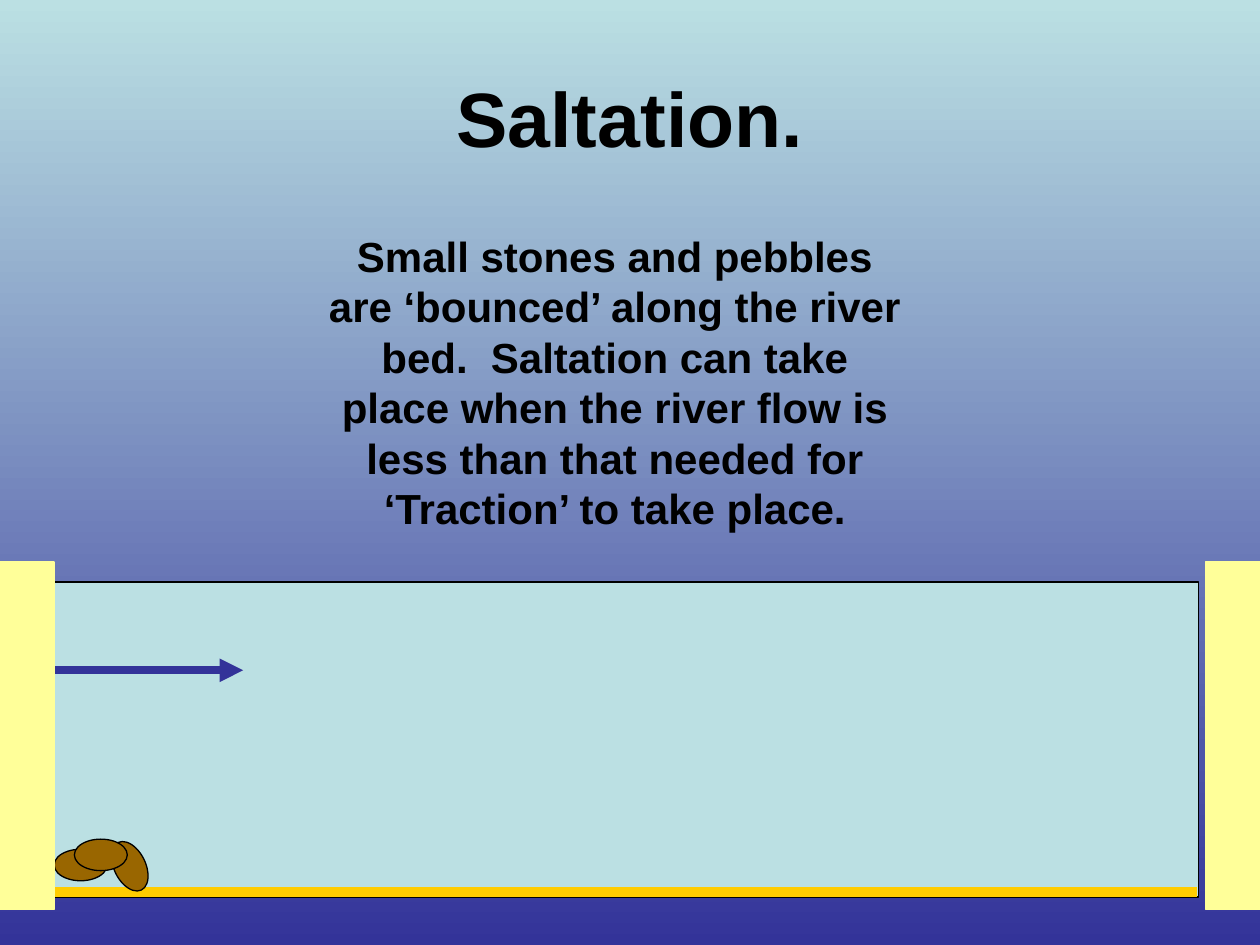
from lxml import etree
from pptx import Presentation
from pptx import util as u
from pptx.dml.color import RGBColor
from pptx.enum import shapes, text
from pptx.oxml import ns

COLOURS = {
    "water": "BBE0E3",
    "deep": "333399",
    "bed": "FFCC00",
    "stone": "996600",
    "bank": "FFFF99",
    "ink": "000000",
}


def colour(name):
    return RGBColor.from_string(COLOURS[name])


def add_text(page, box, words, size=24, anchor=text.MSO_ANCHOR.TOP):
    left, top, width, height = map(u.Inches, box)
    frame = page.shapes.add_textbox(left, top, width, height).text_frame
    frame.word_wrap = True
    frame.vertical_anchor = anchor
    para = frame.paragraphs[0]
    para.alignment = text.PP_ALIGN.CENTER
    span = para.add_run()
    span.text = words
    span.font.name = "Arial"
    span.font.size = u.Pt(size)
    span.font.bold = True
    span.font.color.rgb = colour("ink")


def add_solid(page, box, kind, fill, line="ink", turn=0):
    left, top, width, height = map(u.Inches, box)
    solid = page.shapes.add_shape(kind, left, top, width, height)
    solid.shadow.inherit = False
    solid.fill.solid()
    solid.fill.fore_color.rgb = colour(fill)
    solid.line.color.rgb = colour(line)
    solid.line.width = u.Pt(0.75)
    solid.rotation = turn


def add_level_line(page, left, right, y, name, weight, arrow=False):
    line = page.shapes.add_connector(
        shapes.MSO_CONNECTOR.STRAIGHT,
        u.Inches(left), u.Inches(y), u.Inches(right), u.Inches(y))
    line.line.color.rgb = colour(name)
    line.line.width = u.Pt(weight)
    if arrow:
        etree.SubElement(line.line._get_or_add_ln(), ns.qn("a:tailEnd"), type="triangle")
    etree.SubElement(line._element.spPr, ns.qn("a:effectLst"))


def paint_background(page):
    fill = page.background.fill
    fill.gradient()
    fill.gradient_angle = 270  # top to bottom
    for stop, name, position in zip(fill.gradient_stops, ("water", "deep"), (0, 1)):
        stop.color.rgb = colour(name)
        stop.position = position


def draw_river(page, box):
    left, top, width, height = box
    rectangle = shapes.MSO_SHAPE.RECTANGLE
    # Water and river bed
    add_solid(page, box, rectangle, "water")
    add_level_line(page, left, left + width - 0.01, top + height - 0.04, "bed", 6)
    # Stones
    for across, down, turn in ((0, 2.12, 0), (0.39, 2.13, 64), (0.16, 2.04, 0)):
        add_solid(page, (left + across, top + down, 0.42, 0.25),
                  shapes.MSO_SHAPE.OVAL, "stone", turn=turn)
    # Direction of flow
    add_level_line(page, left, left + 1.5, top + 0.7, "deep", 4.5, arrow=True)


def draw_banks(page, box):
    left, top, width, height = box
    bank = 0.43
    for edge in (left, left + width - bank):
        add_solid(page, (edge, top, bank, height),
                  shapes.MSO_SHAPE.RECTANGLE, "bank", line="bank")


def main():
    deck = Presentation()
    deck.slide_width, deck.slide_height = u.Inches(10), u.Inches(7.5)
    page = deck.slides.add_slide(deck.slide_layouts[6])
    paint_background(page)
    add_text(page, (0.5, 0.3, 9, 1.25), "Saltation.", size=44,
             anchor=text.MSO_ANCHOR.MIDDLE)
    draw_river(page, (0.43, 4.62, 9.08, 2.5))
    add_text(page, (2.48, 1.78, 4.8, 2.5),
             "Small stones and pebbles are ‘bounced’ along the river bed.  "
             "Saltation can take place when the river flow is less than that "
             "needed for ‘Traction’ to take place.")
    draw_banks(page, (0, 4.46, 10, 2.76))
    deck.save("out.pptx")


if __name__ == "__main__":
    main()
